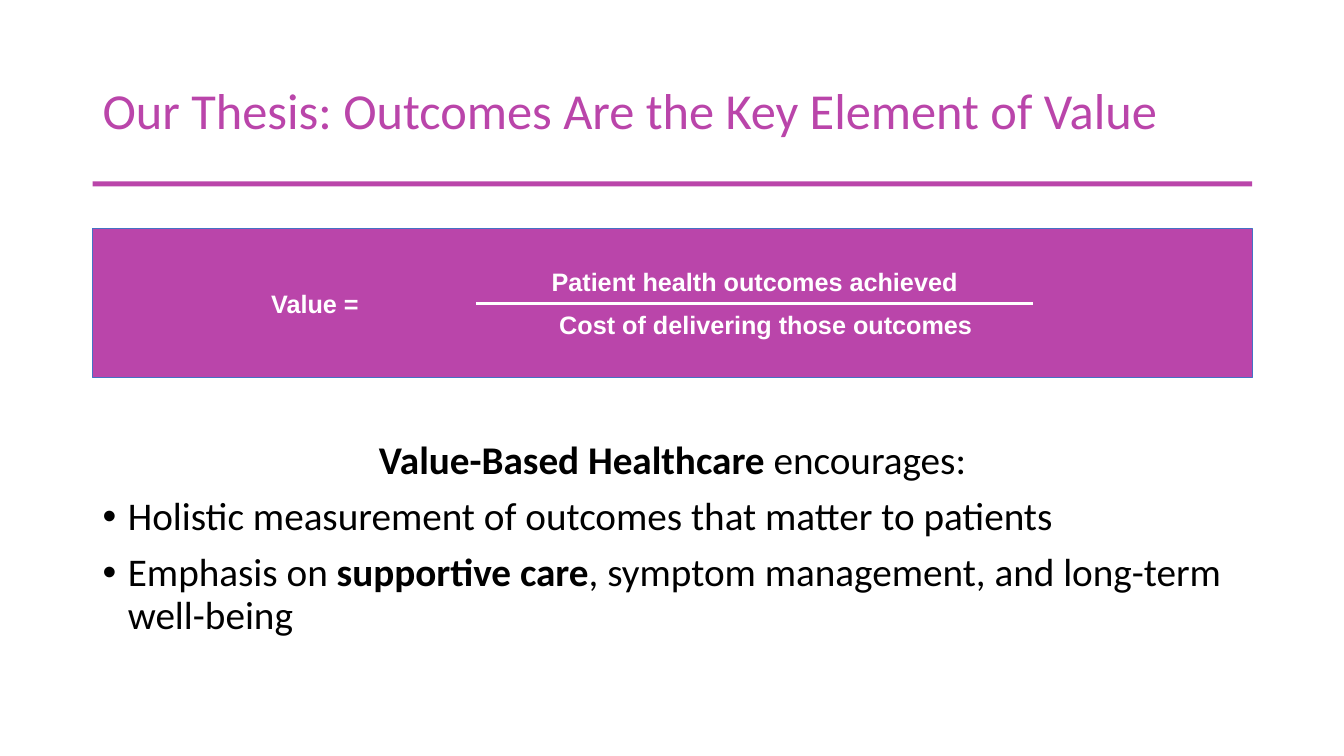
from dataclasses import dataclass

from lxml.etree import SubElement
from pptx import Presentation
from pptx.dml.color import RGBColor
from pptx.enum.shapes import MSO_CONNECTOR, MSO_SHAPE
from pptx.enum.text import MSO_ANCHOR, PP_ALIGN
from pptx.oxml.ns import qn
from pptx.util import Inches, Pt

MAGENTA, WHITE, BLACK, BLUE = "BA45AA", "FFFFFF", "000000", "4472C4"
LEFT, WIDTH = 0.92, 11.5
FRACTION_LEFT, FRACTION_WIDTH = 4.72, 5.53


@dataclass
class Bar:
    top: float
    height: float
    left: float = LEFT
    width: float = WIDTH
    line: str = MAGENTA
    text: str = ""
    align: PP_ALIGN = PP_ALIGN.CENTER
    inset: float = 0.09
    indent: float = 0


@dataclass
class Point:
    runs: list[tuple[str, bool]]
    align: PP_ALIGN = PP_ALIGN.LEFT
    bullet: bool = True
    before: float = 10


BARS = [
    Bar(1.8, 0.05, line=""),
    Bar(2.27, 1.48, line=BLUE, text="Value =", align=PP_ALIGN.LEFT, inset=1.59, indent=0.18),
    Bar(3.08, 0.27, FRACTION_LEFT, 5.75, text="Cost of delivering those outcomes"),
    Bar(2.62, 0.35, FRACTION_LEFT, FRACTION_WIDTH, text="Patient health outcomes achieved"),
]

POINTS = [
    Point([("Value-Based Healthcare", True), (" encourages:", False)],
          PP_ALIGN.CENTER, bullet=False, before=0),
    Point([("Holistic measurement of outcomes that matter to patients", False)]),
    Point([("Emphasis on ", False), ("supportive care", True),
           (", symptom management, and long-term well-being", False)]),
]


def rgb(color: str) -> RGBColor:
    return RGBColor.from_string(color)


def add_run(p, text: str, *, size: float, color: str, font: str = "Calibri",
            bold: bool = False) -> None:
    r = p.add_run()
    r.text = text
    r.font.name = font
    r.font.size = Pt(size)
    r.font.bold = bold
    r.font.color.rgb = rgb(color)


def set_indent(p, left: float, first: float) -> None:
    pPr = p._p.get_or_add_pPr()
    pPr.set("marL", str(Inches(left)))
    pPr.set("indent", str(Inches(first)))


def add_bullet(p) -> None:
    pPr = p._p.get_or_add_pPr()
    SubElement(pPr, qn("a:buFont")).set("typeface", "Arial")
    SubElement(pPr, qn("a:buChar")).set("char", "•")


def add_text_box(s, top: float, height: float, anchor: MSO_ANCHOR):
    sp = s.shapes.add_textbox(Inches(LEFT), Inches(top), Inches(WIDTH), Inches(height))
    tf = sp.text_frame
    tf.word_wrap = True
    tf.vertical_anchor = anchor
    return tf


def draw_bar(s, bar: Bar) -> None:
    sp = s.shapes.add_shape(MSO_SHAPE.RECTANGLE, Inches(bar.left), Inches(bar.top),
                            Inches(bar.width), Inches(bar.height))
    sp.shadow.inherit = False
    sp.fill.solid()
    sp.fill.fore_color.rgb = rgb(MAGENTA)
    if bar.line:
        sp.line.color.rgb = rgb(bar.line)
        sp.line.width = Pt(0.75)
    else:
        sp.line.fill.background()
    if bar.text:
        tf = sp.text_frame
        tf.word_wrap = True
        tf.vertical_anchor = MSO_ANCHOR.MIDDLE
        tf.margin_left = Inches(bar.inset)
        tf.margin_right = tf.margin_top = tf.margin_bottom = Inches(0.09)
        p = tf.paragraphs[0]
        p.alignment = bar.align
        set_indent(p, bar.indent, 0)
        add_run(p, bar.text, size=18, color=WHITE, font="Arial", bold=True)


def draw_fraction_line(s, y: float) -> None:
    line = s.shapes.add_connector(MSO_CONNECTOR.STRAIGHT, Inches(FRACTION_LEFT), Inches(y),
                                  Inches(FRACTION_LEFT + FRACTION_WIDTH), Inches(y))
    line.line.color.rgb = rgb(WHITE)
    line.line.width = Pt(2.25)
    SubElement(line._element.spPr, qn("a:effectLst"))


def draw_title(s, text: str) -> None:
    p = add_text_box(s, 0.4, 1.45, MSO_ANCHOR.MIDDLE).paragraphs[0]
    p.line_spacing = 0.9
    add_run(p, text, size=36, color=MAGENTA)


def draw_points(s, points: list[Point]) -> None:
    tf = add_text_box(s, 4.32, 2.47, MSO_ANCHOR.TOP)
    for i, point in enumerate(points):
        p = tf.add_paragraph() if i else tf.paragraphs[0]
        p.alignment = point.align
        p.line_spacing = 0.9
        p.space_before = Pt(point.before)
        set_indent(p, 0.25, -0.25)
        if point.bullet:
            add_bullet(p)
        for text, bold in point.runs:
            add_run(p, text, size=28, color=BLACK, bold=bold)


def main() -> None:
    prs = Presentation()
    prs.slide_width, prs.slide_height = Inches(13.33), Inches(7.5)
    s = prs.slides.add_slide(prs.slide_layouts[6])
    draw_title(s, "Our Thesis: Outcomes Are the Key Element of Value")
    draw_points(s, POINTS)
    for bar in BARS:
        draw_bar(s, bar)
    draw_fraction_line(s, 3.01)
    prs.save("out.pptx")


if __name__ == "__main__":
    main()
